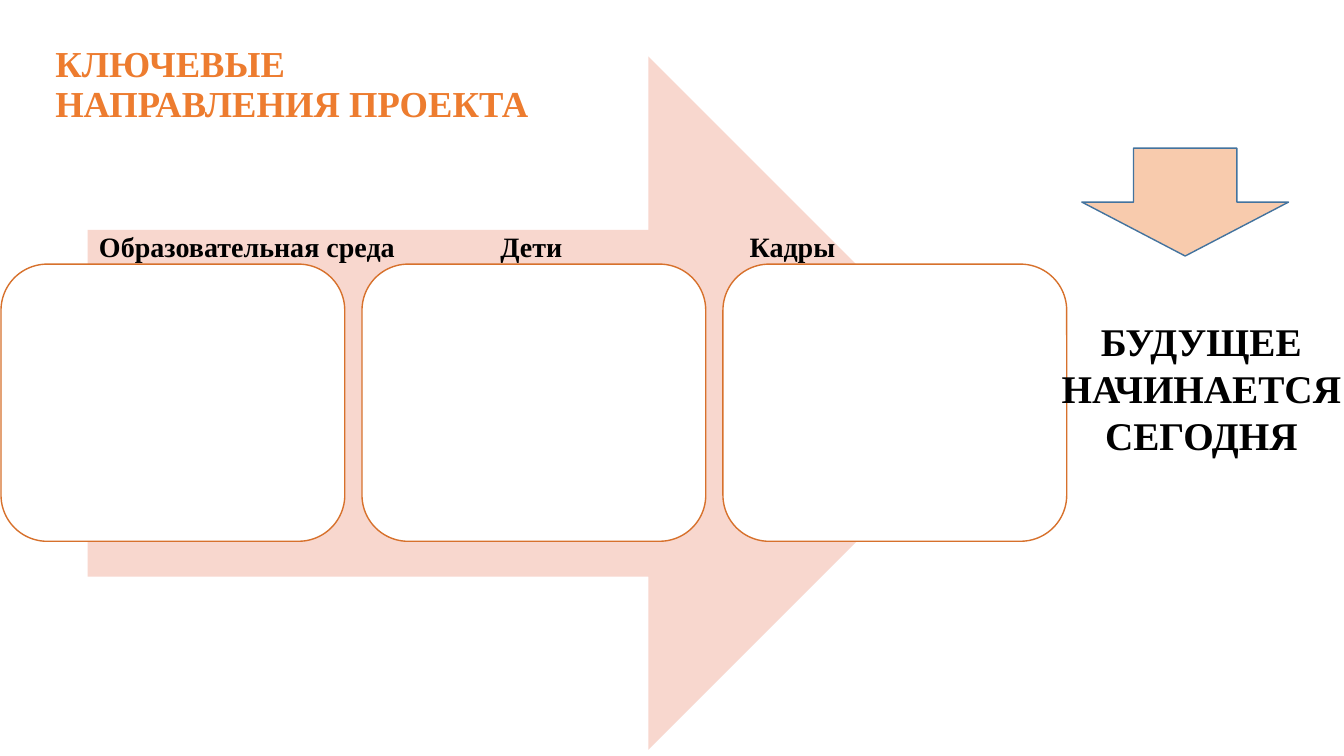
from pptx import Presentation
from pptx.dml.color import RGBColor
from pptx.enum.shapes import MSO_SHAPE
from pptx.enum.text import MSO_ANCHOR, PP_ALIGN
from pptx.util import Inches, Pt

RIGHT_ARROW = MSO_SHAPE.RIGHT_ARROW
DOWN_ARROW = MSO_SHAPE.DOWN_ARROW
ROUND_RECT = MSO_SHAPE.ROUNDED_RECTANGLE
TOP, BOTTOM = MSO_ANCHOR.TOP, MSO_ANCHOR.BOTTOM
LEFT, CENTER = PP_ALIGN.LEFT, PP_ALIGN.CENTER

FONT = "Times New Roman"
BLACK = RGBColor(0x00, 0x00, 0x00)
WHITE = RGBColor(0xFF, 0xFF, 0xFF)
ORANGE = RGBColor(0xED, 0x7C, 0x2F)
CARD_LINE = RGBColor(0xD7, 0x71, 0x2C)
PINK = RGBColor(0xF8, 0xD7, 0xCE)
PEACH = RGBColor(0xF8, 0xCB, 0xAD)
BLUE = RGBColor(0x43, 0x73, 0x9E)

CARD_LEFT, CARD_PITCH = 0.01, 3.58
# Text, left and width of the label above each card
DIRECTIONS = [
    ("Образовательная среда", 0.87, 3.16),
    ("Дети", 4.86, 0.82),
    ("Кадры", 7.33, 1.06),
]


def add_figure(slide, kind, left, top, width, height, fill, line=None):
    s = slide.shapes.add_shape(kind, Inches(left), Inches(top), Inches(width), Inches(height))
    s.shadow.inherit = False
    s.fill.solid()
    s.fill.fore_color.rgb = fill
    if line is None:
        s.line.fill.background()
    else:
        s.line.color.rgb = line
        s.line.width = Pt(1)
    return s


def add_text(slide, text, left, top, width, height, size, color=BLACK,
             align=CENTER, anchor=TOP, wrap=True):
    """Add a bold one-paragraph text box and return it."""
    s = slide.shapes.add_textbox(Inches(left), Inches(top), Inches(width), Inches(height))
    tf = s.text_frame
    tf.word_wrap = wrap
    tf.vertical_anchor = anchor
    p = tf.paragraphs[0]
    p.alignment = align
    r = p.add_run()
    r.text = text
    r.font.name = FONT
    r.font.size = Pt(size)
    r.font.bold = True
    r.font.color.rgb = color
    return s


def add_title(slide):
    s = add_text(slide, "КЛЮЧЕВЫЕ НАПРАВЛЕНИЯ ПРОЕКТА", 0.45, 0.75, 5.29, 0.59,
                 26.1, ORANGE, LEFT, BOTTOM)
    s.text_frame.margin_bottom = Inches(0.1)
    s.text_frame.paragraphs[0].line_spacing = 0.9


def main():
    prs = Presentation()
    prs.slide_width, prs.slide_height = Inches(13.33), Inches(7.5)
    slide = prs.slides.add_slide(prs.slide_layouts[6])

    add_title(slide)
    add_figure(slide, RIGHT_ARROW, 0.87, 0.56, 9, 6.88, PINK)
    for i in range(len(DIRECTIONS)):
        add_figure(slide, ROUND_RECT, CARD_LEFT + i * CARD_PITCH, 2.62, 3.41, 2.75,
                   WHITE, CARD_LINE)
    for label, left, width in DIRECTIONS:
        add_text(slide, label, left, 2.23, width, 0.44, 20, wrap=False)
    add_text(slide, "БУДУЩЕЕ НАЧИНАЕТСЯ СЕГОДНЯ", 10.25, 3.1, 3.33, 1.51, 28)
    add_figure(slide, DOWN_ARROW, 10.73, 1.47, 2.05, 1.07, PEACH, BLUE)

    prs.save("out.pptx")


if __name__ == "__main__":
    main()
